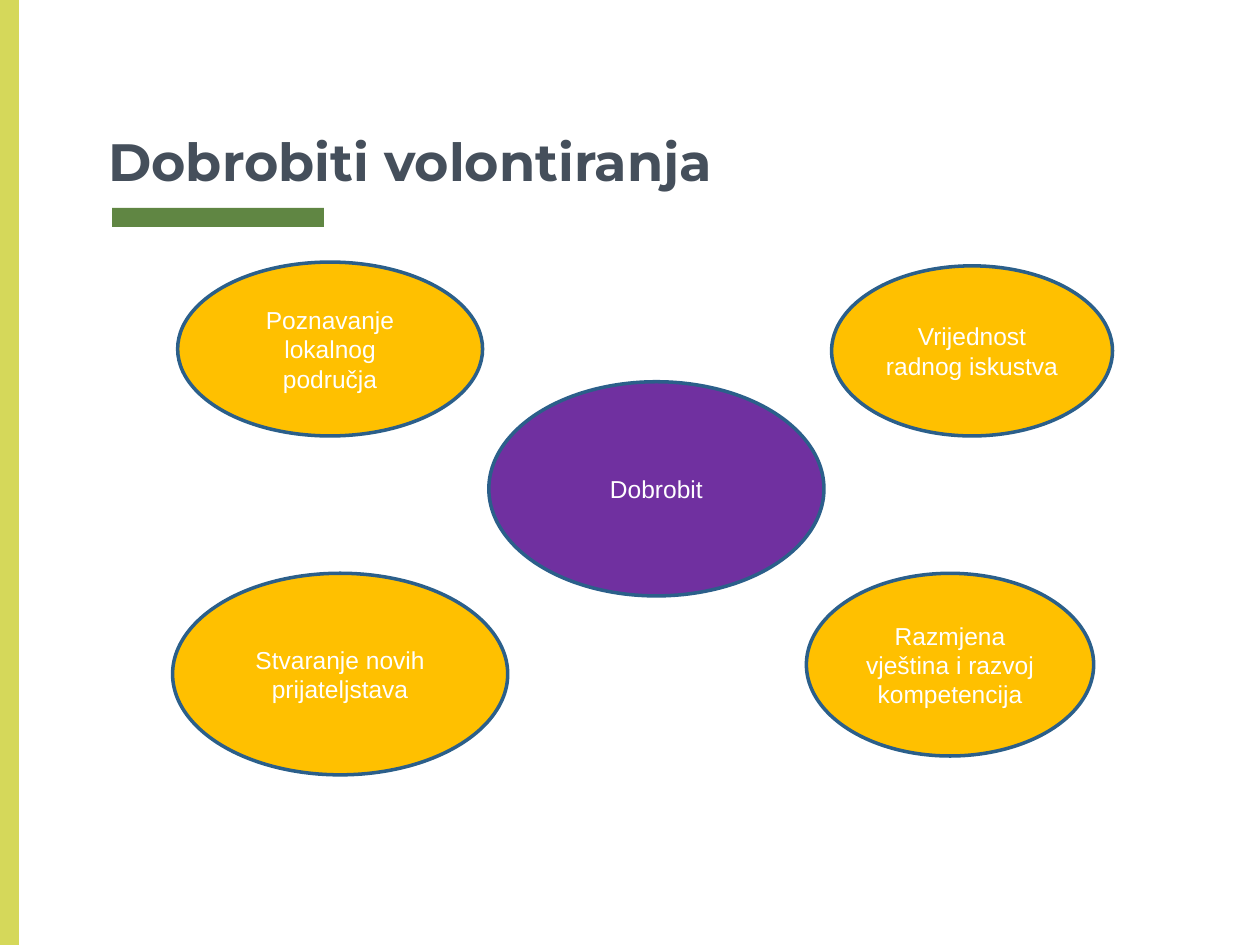
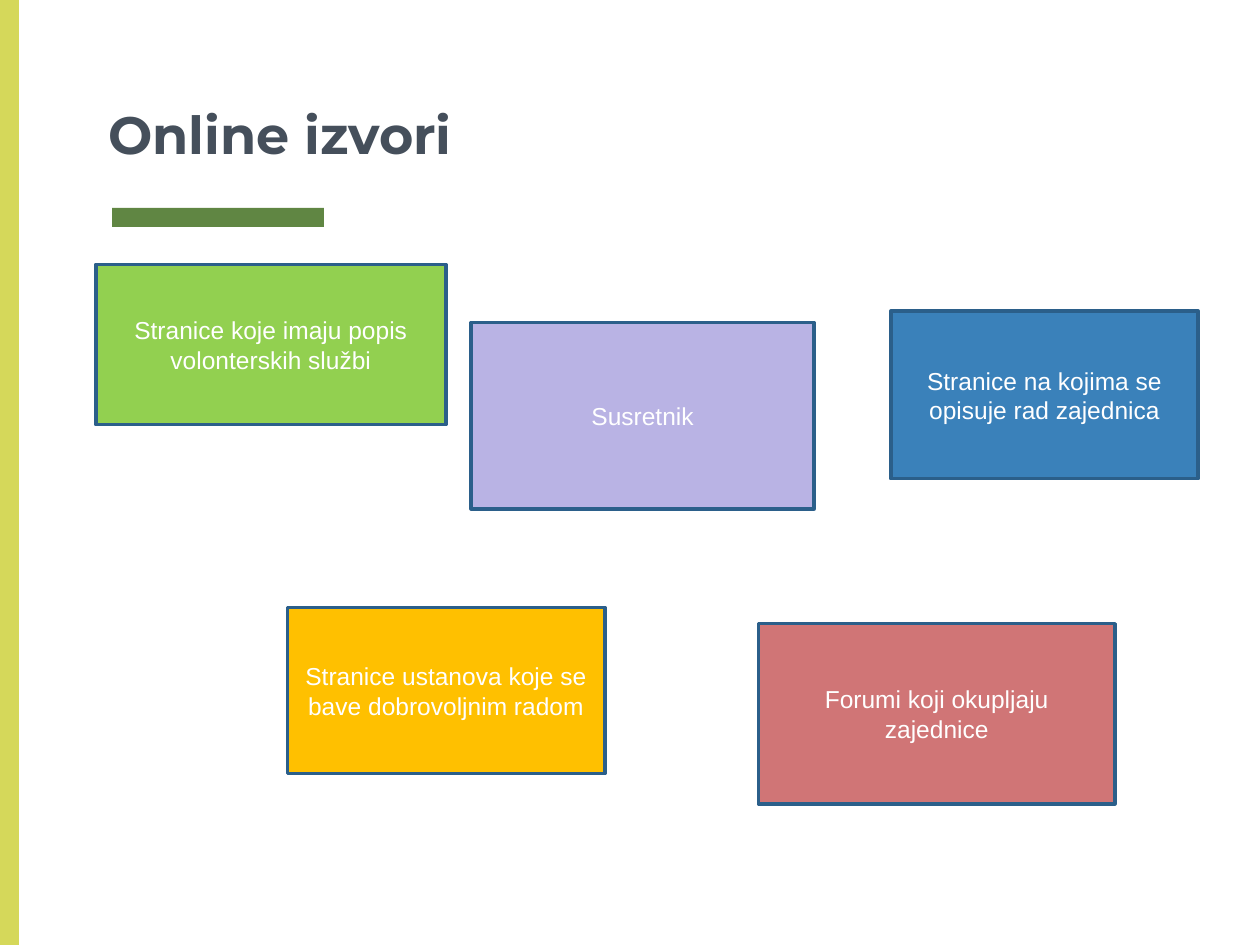
"""Build two slides on the benefits of volunteering and its online sources."""
import pptx
import pptx.dml.color
import pptx.enum.shapes
import pptx.enum.text
import pptx.util

RGBColor = pptx.dml.color.RGBColor
Shape = pptx.enum.shapes.MSO_SHAPE
Align = pptx.enum.text.PP_ALIGN
Anchor = pptx.enum.text.MSO_ANCHOR

WHITE = RGBColor(0xFF, 0xFF, 0xFF)
SLATE = RGBColor(0x45, 0x4F, 0x5B)
LIME = RGBColor(0xD5, 0xD8, 0x5A)
MOSS = RGBColor(0x60, 0x86, 0x43)
OUTLINE = RGBColor(0x2B, 0x5F, 0x8A)
PURPLE = RGBColor(0x70, 0x30, 0xA0)
AMBER = RGBColor(0xFF, 0xC0, 0x00)
BLUE = RGBColor(0x3A, 0x81, 0xBA)
GREEN = RGBColor(0x92, 0xD0, 0x50)
LILAC = RGBColor(0xB9, 0xB3, 0xE4)
ROSE = RGBColor(0xD0, 0x75, 0x76)

deck = pptx.Presentation()
deck.slide_width = pptx.util.Inches(10)
deck.slide_height = pptx.util.Inches(7.5)
COLUMN = deck.slide_width / 100
ROW = deck.slide_height / 75


def place(left, top, width, height):
    """Turn grid columns and rows into slide lengths."""
    return [round(left * COLUMN), round(top * ROW), round(width * COLUMN), round(height * ROW)]


def write(box, text, font="Arial", size=14, color=WHITE, bold=False,
          align=Align.CENTER, anchor=Anchor.MIDDLE):
    """Put formatted text into a box."""
    frame = box.text_frame
    frame.word_wrap = True
    frame.vertical_anchor = anchor
    para = frame.paragraphs[0]
    para.alignment = align
    span = para.add_run()
    span.text = text
    span.font.name = font
    span.font.size = pptx.util.Pt(size)
    span.font.bold = bold
    span.font.color.rgb = color


BANDS = [((8.9, 16.5, 16.8, 1.5), MOSS), ((0, 0, 1.5, 75), LIME)]

SLIDES = [
    ("Dobrobiti volontiranja", (7.6, 2.7, 63.6, 13.5), Shape.OVAL, [
        ("Dobrobit", (38.8, 30.3, 26.6, 17), PURPLE),
        ("Vrijednost radnog iskustva", (66, 21.1, 22.3, 13.5), AMBER),
        ("Razmjena vještina i razvoj kompetencija", (64, 45.5, 22.8, 14.5), AMBER),
        ("Poznavanje lokalnog područja", (14.1, 20.8, 24.2, 13.8), AMBER),
        ("Stvaranje novih prijateljstava", (13.7, 45.5, 26.6, 16), AMBER),
    ]),
    ("Online izvori", (7.6, 0, 84.9, 14.1), Shape.RECTANGLE, [
        ("Stranice na kojima se opisuje rad zajednica", (70.7, 24.7, 24.4, 13.3), BLUE),
        ("Stranice koje imaju popis volonterskih službi", (7.6, 21, 27.8, 12.7), GREEN),
        ("Stranice ustanova koje se bave dobrovoljnim radom", (22.8, 48.2, 25.2, 13.2), AMBER),
        ("Susretnik", (37.4, 25.6, 27.2, 14.8), LILAC),
        ("Forumi koji okupljaju zajednice", (60.2, 49.5, 28.3, 14.3), ROSE),
    ]),
]

for title, title_area, kind, topics in SLIDES:
    page = deck.slides.add_slide(deck.slide_layouts[6])

    for area, color in BANDS:
        band = page.shapes.add_shape(Shape.RECTANGLE, *place(*area))
        band.shadow.inherit = False
        band.fill.solid()
        band.fill.fore_color.rgb = color
        band.line.fill.background()

    heading = page.shapes.add_textbox(*place(*title_area))
    frame = heading.text_frame
    frame.margin_left = frame.margin_right = round(COLUMN)
    frame.margin_top = frame.margin_bottom = round(ROW)
    write(heading, title, font="Montserrat", size=30, color=SLATE, bold=True,
          align=Align.LEFT, anchor=Anchor.BOTTOM)

    for text, area, color in topics:
        topic = page.shapes.add_shape(kind, *place(*area))
        topic.shadow.inherit = False
        topic.fill.solid()
        topic.fill.fore_color.rgb = color
        topic.line.color.rgb = OUTLINE
        topic.line.width = pptx.util.Pt(2)
        write(topic, text)

deck.save("out.pptx")
